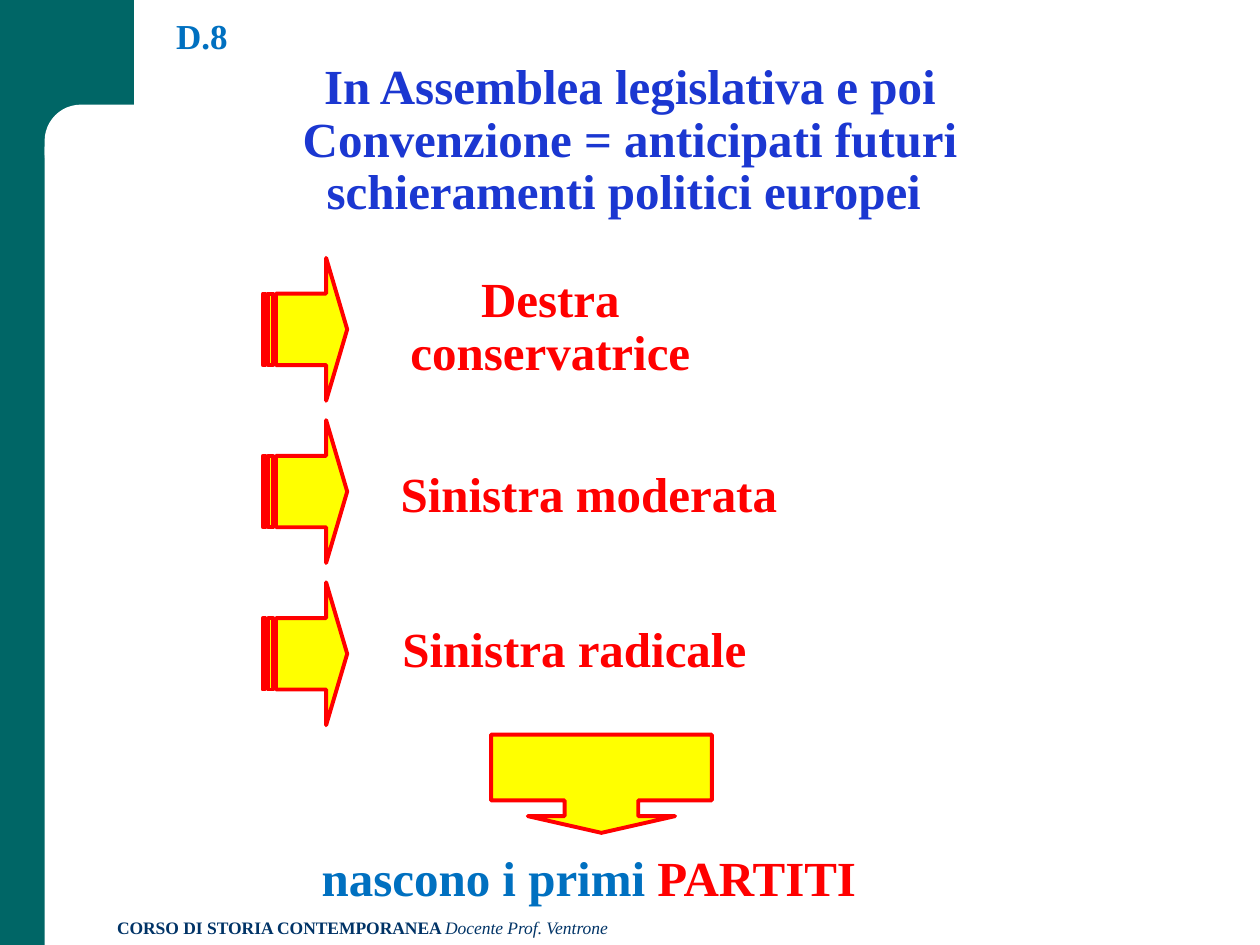
import pptx
import pptx.util
import pptx.dml.color
import pptx.enum.shapes
import pptx.enum.text

Cm, Pt = pptx.util.Cm, pptx.util.Pt
SHAPE = pptx.enum.shapes.MSO_SHAPE
ALIGN = pptx.enum.text.PP_ALIGN
ANCHOR = pptx.enum.text.MSO_ANCHOR

COLORS = {
    "teal": "006666", "white": "FFFFFF", "navy": "003366", "indigo": "1B37D1",
    "blue": "0070C0", "red": "FF0000", "yellow": "FFFF00",
}
HEADING = {"size": Pt(28), "bold": True}
FOOTER = {"size": Pt(10), "bold": True}
CENTERED = {"alignment": ALIGN.CENTER, "line_spacing": 0.9}


class Deck:
    """Holds the style and the current slide, and adds elements to it."""

    def __init__(self, width, height, font):
        self.prs = pptx.Presentation()
        self.prs.slide_width, self.prs.slide_height = Cm(width), Cm(height)
        self.font = font
        self.s = None

    def rgb(self, name):
        return pptx.dml.color.RGBColor.from_string(COLORS[name])

    def set(self, target, values):
        for key, value in values.items():
            setattr(target, key, value)

    def slide(self):
        self.s = self.prs.slides.add_slide(self.prs.slide_layouts[6])

    def shape(self, kind, box, fill, line=None, adj=()):
        sp = self.s.shapes.add_shape(kind, *map(Cm, box))
        sp.shadow.inherit = False
        sp.fill.solid()
        sp.fill.fore_color.rgb = self.rgb(fill)
        if line:
            sp.line.color.rgb = self.rgb(line)
            sp.line.width = Pt(2.25)
        else:
            sp.line.fill.background()
        for i, value in enumerate(adj):
            sp.adjustments[i] = value

    def text(self, box, runs, paragraph, wrap=True, anchor=ANCHOR.TOP):
        tf = self.s.shapes.add_textbox(*map(Cm, box)).text_frame
        self.set(tf, {"word_wrap": wrap, "vertical_anchor": anchor})
        p = tf.paragraphs[0]
        self.set(p, paragraph)
        for words, color, style in runs:
            r = p.add_run()
            r.text = words
            self.set(r.font, {"name": self.font, **style})
            r.font.color.rgb = self.rgb(color)

    def save(self):
        self.prs.save("out.pptx")


def main():
    deck = Deck(25.4, 19.05, "Times New Roman")
    deck.slide()

    deck.shape(SHAPE.RECTANGLE, (0, 0, 0.9, 19.05), "teal")
    deck.shape(SHAPE.RECTANGLE, (0, 0, 2.7, 2.96), "teal")
    deck.shape(SHAPE.ROUNDED_RECTANGLE, (0.9, 2.11, 15.4, 1.7), "white", adj=[0.43])
    deck.text((2.11, 18.36, 15.67, 0.69),
              [("CORSO DI STORIA CONTEMPORANEA ", "navy", FOOTER),
               ("Docente Prof. Ventrone", "navy", {**FOOTER, "bold": False, "italic": True})],
              {})

    deck.text((3.3, 0, 2, 1.27), [("D.8", "blue", {**HEADING, "size": Pt(20)})],
              {"line_spacing": 0.9}, anchor=ANCHOR.BOTTOM)
    deck.text((3.7, 1.12, 18, 3.48),
              [("In Assemblea legislativa e poi Convenzione = anticipati futuri "
                "schieramenti politici europei ", "indigo", HEADING)], CENTERED)

    groups = [
        ("Destra conservatrice", (7.12, 5.43, 7.95, 2.41), True),
        ("Sinistra moderata", (7.78, 9.35, 8.18, 1.35), False),
        ("Sinistra radicale", (7.82, 12.48, 7.52, 1.35), False),
    ]
    for i, (name, box, wrap) in enumerate(groups):
        deck.shape(SHAPE.STRIPED_RIGHT_ARROW, (5.3, 5.2 + 3.27 * i, 1.7, 2.88),
                   "yellow", "red", [0.5, 0.25])
        deck.text(box, [(name, "red", HEADING)], CENTERED, wrap)

    deck.shape(SHAPE.DOWN_ARROW_CALLOUT, (9.9, 14.81, 4.45, 1.98),
               "yellow", "red", [0.75, 0.75, 0.17, 0.67])
    deck.text((6.17, 17.09, 11.4, 1.35),
              [("nascono i primi ", "blue", HEADING), ("PARTITI", "red", HEADING)],
              CENTERED, wrap=False)
    deck.save()


if __name__ == "__main__":
    main()
